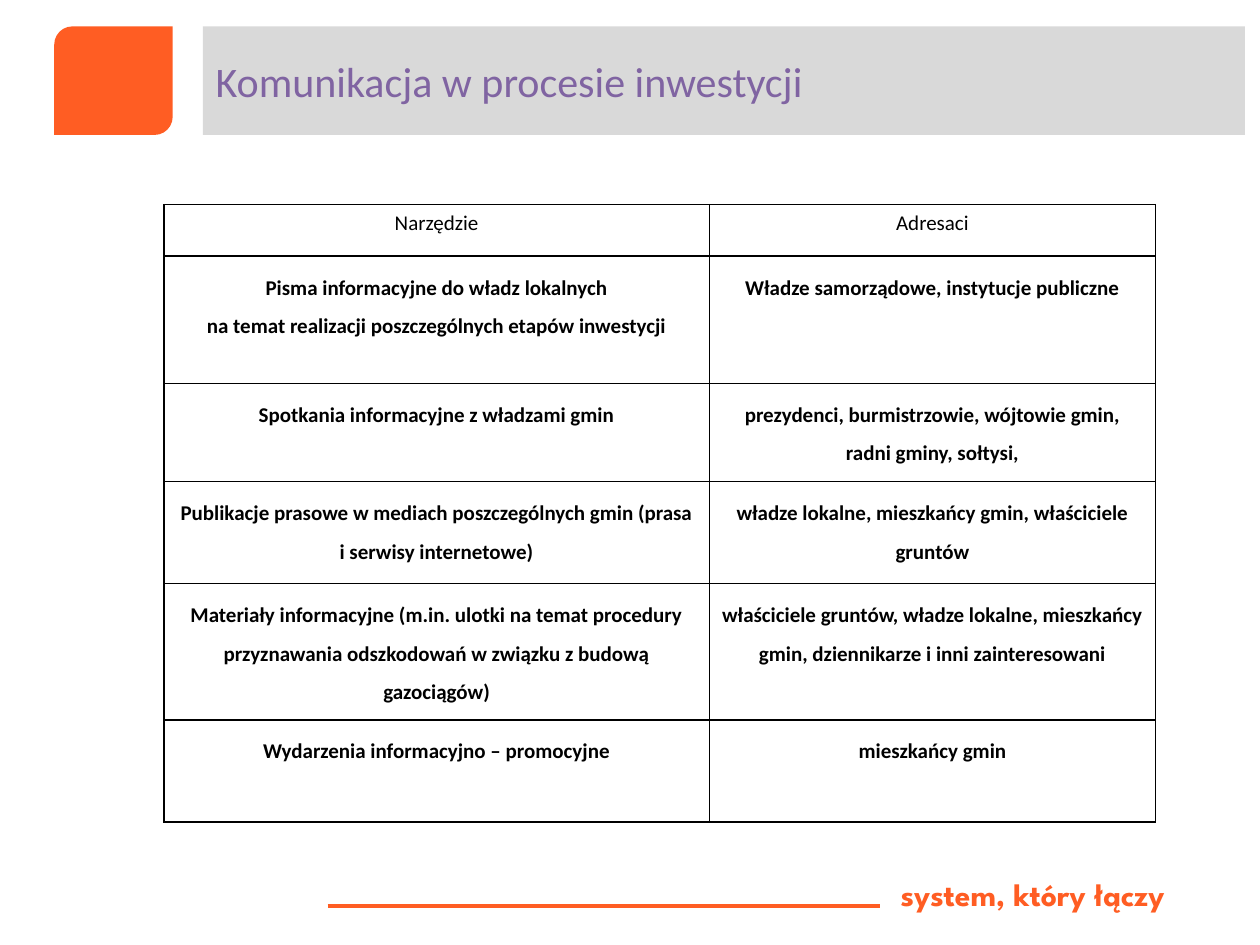
from lxml import etree
from pptx import Presentation
from pptx.dml.color import RGBColor
from pptx.enum import shapes, text
from pptx.oxml import ns
from pptx.util import Pt

COLORS = {"orange": "FF5D23", "grey": "D9D9D9", "violet": "8064A2",
          "black": "000000", "white": "FFFFFF"}
BODY_FONT = "Calibri"
SLOGAN_FONT = "League Spartan"

COLUMN_WIDTHS = [311.8, 254.9]
ROW_HEIGHTS = [29.5, 72.7, 56.2, 58.3, 77.8, 58.3]
ROWS = [
    ("Narzędzie", "Adresaci"),
    ("Pisma informacyjne do władz lokalnych\n"
     "na temat realizacji poszczególnych etapów inwestycji",
     "Władze samorządowe, instytucje publiczne"),
    ("Spotkania informacyjne z władzami gmin",
     "prezydenci, burmistrzowie, wójtowie gmin, radni gminy, sołtysi,"),
    ("Publikacje prasowe w mediach poszczególnych gmin (prasa i serwisy internetowe)",
     "władze lokalne, mieszkańcy gmin, właściciele gruntów"),
    ("Materiały informacyjne (m.in. ulotki na temat procedury przyznawania "
     "odszkodowań w związku z budową gazociągów)",
     "właściciele gruntów, władze lokalne, mieszkańcy gmin, dziennikarze "
     "i inni zainteresowani"),
    ("Wydarzenia informacyjno – promocyjne", "mieszkańcy gmin"),
]


def color(name):
    return RGBColor.from_string(COLORS[name])


def fill_with(target, name):
    target.fill.solid()
    target.fill.fore_color.rgb = color(name)


def format_font(paragraph, name, size, color_name, bold=False):
    for run in paragraph.runs:
        run.font.name = name
        run.font.size = Pt(size)
        run.font.bold = bold
        run.font.color.rgb = color(color_name)


def add_borders(cell, width=1):
    properties = cell._tc.get_or_add_tcPr()
    for position, side in enumerate(("lnL", "lnR", "lnT", "lnB")):
        line = etree.Element(ns.qn(f"a:{side}"), w=str(Pt(width)))
        fill = etree.SubElement(line, ns.qn("a:solidFill"))
        etree.SubElement(fill, ns.qn("a:srgbClr"), val=COLORS["black"])
        properties.insert(position, line)


def add_header(slide, left, top, width, height):
    # Orange block with two rounded corners
    block = slide.shapes.add_shape(
        shapes.MSO_SHAPE.ROUND_2_DIAG_RECTANGLE, Pt(left), Pt(top), Pt(67.7), Pt(height))
    block.shadow.inherit = False
    fill_with(block, "orange")
    block.line.fill.background()

    # Title on a grey band
    offset = 85
    title = slide.shapes.title
    title.left, title.top = Pt(left + offset), Pt(top)
    title.width, title.height = Pt(width - offset), Pt(height)
    fill_with(title, "grey")
    frame = title.text_frame
    frame.text = "Komunikacja w procesie inwestycji"
    frame.auto_size = text.MSO_AUTO_SIZE.NONE
    frame.vertical_anchor = text.MSO_ANCHOR.MIDDLE
    paragraph = frame.paragraphs[0]
    paragraph.alignment = text.PP_ALIGN.LEFT
    format_font(paragraph, BODY_FONT, 24, "violet")


def add_tools_table(slide, left, top, width, height):
    table = slide.shapes.add_table(
        len(ROWS), len(COLUMN_WIDTHS), Pt(left), Pt(top), Pt(width), Pt(height)).table
    for column, column_width in zip(table.columns, COLUMN_WIDTHS):
        column.width = Pt(column_width)
    for row, row_height in zip(table.rows, ROW_HEIGHTS):
        row.height = Pt(row_height)
    for row_index, row in enumerate(ROWS):
        is_body = row_index > 0
        for column_index, wording in enumerate(row):
            cell = table.cell(row_index, column_index)
            cell.text_frame.text = wording
            fill_with(cell, "white")
            add_borders(cell)
            for paragraph in cell.text_frame.paragraphs:
                paragraph.alignment = text.PP_ALIGN.CENTER
                paragraph.line_spacing = 1.5 if is_body else 1.0
                format_font(paragraph, BODY_FONT, 12, "black", bold=is_body)


def add_footer(slide, left, top, width, height):
    # Rule
    rule_y = Pt(top + 20.9)
    rule = slide.shapes.add_connector(
        shapes.MSO_CONNECTOR.STRAIGHT, Pt(left), rule_y, Pt(left + 315.4), rule_y)
    rule.line.color.rgb = color("orange")
    rule.line.width = Pt(2.25)
    etree.SubElement(rule._element.spPr, ns.qn("a:effectLst"))

    # Slogan
    offset = 320.4
    slogan = slide.shapes.add_textbox(
        Pt(left + offset), Pt(top), Pt(width - offset), Pt(height))
    fill_with(slogan, "white")
    frame = slogan.text_frame
    frame.word_wrap = True
    frame.vertical_anchor = text.MSO_ANCHOR.MIDDLE
    frame.text = "system, który łączy"
    format_font(frame.paragraphs[0], SLOGAN_FONT, 18, "orange", bold=True)


def main():
    presentation = Presentation()
    presentation.slide_width, presentation.slide_height = Pt(720), Pt(540)
    slide = presentation.slides.add_slide(presentation.slide_layouts[5])
    add_footer(slide, 187.2, 496.8, 507.6, 28)
    add_tools_table(slide, 93.6, 116.9, sum(COLUMN_WIDTHS), sum(ROW_HEIGHTS))
    add_header(slide, 31, 15.1, 680.4, 62)
    presentation.save("out.pptx")


if __name__ == "__main__":
    main()
